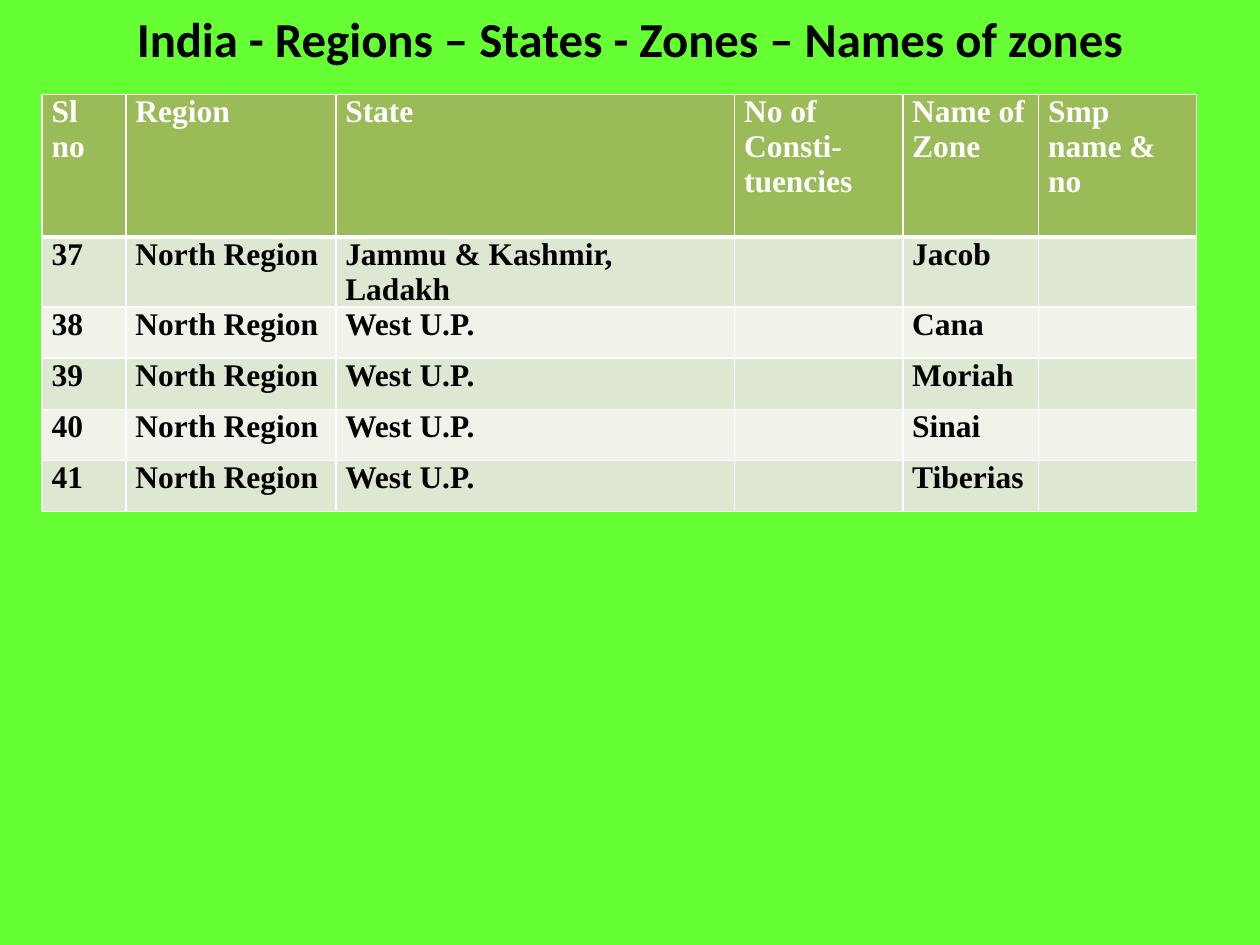
"""Build the slide that lists the zones of the North Region by state."""
import pptx
import pptx.dml.color
import pptx.enum.text
import pptx.oxml
import pptx.oxml.ns
import pptx.util

Cm, Pt = pptx.util.Cm, pptx.util.Pt

HEADING = "India - Regions – States - Zones – Names of zones"
HEADERS = ["Sl no", "Region", "State", "No of Consti-tuencies", "Name of\nZone", "Smp name & no"]
FIRST_NUMBER = 37
REGION = "North Region"
ZONES = [
    ("Jammu & Kashmir, Ladakh", "Jacob"),
    ("West U.P.", "Cana"),
    ("West U.P.", "Moriah"),
    ("West U.P.", "Sinai"),
    ("West U.P.", "Tiberias"),
]
COLUMN_WIDTHS = [1.69, 4.23, 8.04, 3.39, 2.74, 3.18]
ROW_HEIGHTS = [2.87, 1.41] + [1.03] * 4
HEADER_FILL, BAND_FILLS = "9BBB59", ("DEE7D1", "EFF3EA")
BACKGROUND, WHITE, BLACK = "66FF33", "FFFFFF", "000000"


def paint(fill, colour):
    fill.solid()
    fill.fore_color.rgb = pptx.dml.color.RGBColor.from_string(colour)


def add_run(paragraph, text, font, size, colour):
    run = paragraph.add_run()
    run.text = text
    run.font.name, run.font.size, run.font.bold = font, Pt(size), True
    paint(run.font.fill, colour)


def add_borders(cell, widths):
    properties = cell._tc.get_or_add_tcPr()
    for side, width in widths.items():
        properties.append(pptx.oxml.parse_xml(
            f'<a:{side} {pptx.oxml.ns.nsdecls("a")} w="{Pt(width)}">'
            f'<a:solidFill><a:srgbClr val="{WHITE}"/></a:solidFill></a:{side}>'))


def fill_cell(cell, text, row_number):
    is_header = row_number == 0
    top, bottom = {0: (1, 3), 1: (3, 1)}.get(row_number, (1, 1))
    add_borders(cell, {"lnL": 1, "lnR": 1, "lnT": top, "lnB": bottom})
    paint(cell.fill, HEADER_FILL if is_header else BAND_FILLS[(row_number - 1) % 2])
    cell.margin_left = cell.margin_right = Cm(0.19)
    cell.margin_top = cell.margin_bottom = 0
    for index, line in enumerate(text.split("\n") if text else []):
        frame = cell.text_frame
        paragraph = frame.add_paragraph() if index else frame.paragraphs[0]
        add_run(paragraph, line, "Times New Roman", 18, WHITE if is_header else BLACK)


def add_heading(slide):
    heading = slide.shapes.title
    heading.left, heading.top, heading.width, heading.height = Cm(1.27), 0, Cm(22.86), Cm(3.18)
    frame = heading.text_frame
    frame.vertical_anchor = pptx.enum.text.MSO_ANCHOR.TOP
    frame.auto_size = pptx.enum.text.MSO_AUTO_SIZE.NONE
    frame.margin_top = Cm(0.18)
    paragraph = frame.paragraphs[0]
    paragraph.alignment = pptx.enum.text.PP_ALIGN.CENTER
    add_run(paragraph, HEADING, "Calibri", 27.9, BLACK)


def add_zone_table(slide):
    rows = [HEADERS] + [
        [str(number), REGION, state, "", zone, ""]
        for number, (state, zone) in enumerate(ZONES, FIRST_NUMBER)
    ]
    zone_table = slide.shapes.add_table(
        len(rows), len(HEADERS), Cm(0.85), Cm(1.91),
        Cm(sum(COLUMN_WIDTHS)), Cm(sum(ROW_HEIGHTS))).table
    for column, width in zip(zone_table.columns, COLUMN_WIDTHS):
        column.width = Cm(width)
    for row_number, (row, height, texts) in enumerate(zip(zone_table.rows, ROW_HEIGHTS, rows)):
        row.height = Cm(height)
        for cell, text in zip(row.cells, texts):
            fill_cell(cell, text, row_number)


def main():
    deck = pptx.Presentation()
    deck.slide_width, deck.slide_height = Cm(25.4), Cm(19.05)
    slide = deck.slides.add_slide(deck.slide_layouts.get_by_name("Title Only"))
    paint(slide.background.fill, BACKGROUND)
    add_heading(slide)
    add_zone_table(slide)
    deck.save("out.pptx")


if __name__ == "__main__":
    main()
